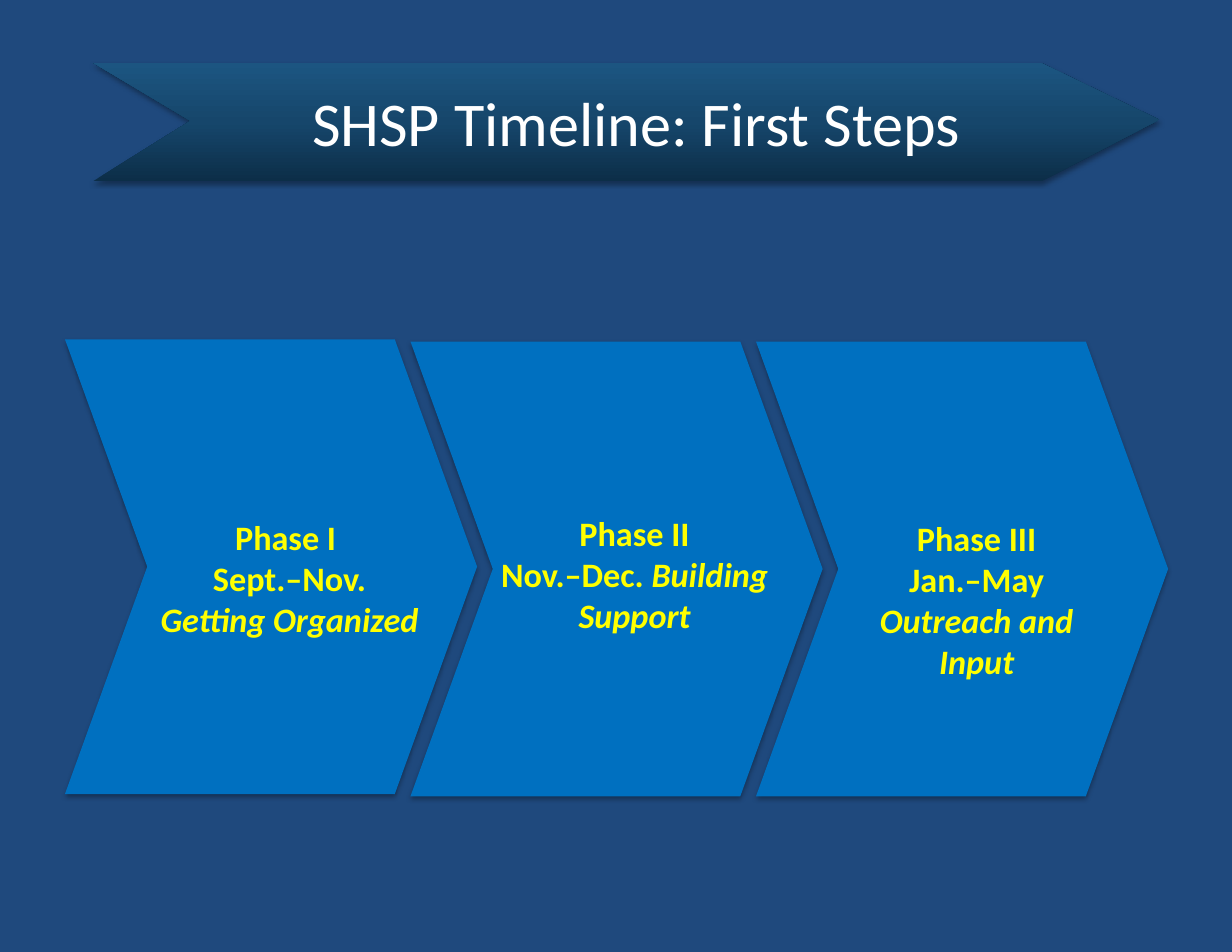
import copy
from lxml import etree
from pptx import Presentation, util as u
from pptx.dml.color import RGBColor
from pptx.enum import text
from pptx.oxml.ns import qn

NAVY = RGBColor(0x1F, 0x49, 0x7D)
BLUE = RGBColor(0x00, 0x70, 0xC0)
YELLOW = RGBColor(0xFF, 0xFF, 0x00)
WHITE = RGBColor(0xFF, 0xFF, 0xFF)
BANNER_STOPS = [
    (0, RGBColor(0x0C, 0x2E, 0x48)),
    (0.5, RGBColor(0x16, 0x46, 0x6B)),
    (1, RGBColor(0x1C, 0x55, 0x81)),
]

deck = Presentation()
deck.slide_width, deck.slide_height = u.Inches(11), u.Inches(8.5)
COLUMN = deck.slide_width / 110
ROW = deck.slide_height / 85
page = deck.slides.add_slide(deck.slide_layouts[6])
page.background.fill.solid()
page.background.fill.fore_color.rgb = NAVY


def add_outline(points):
    corners = [(round(x * COLUMN), round(y * ROW)) for x, y in points]
    builder = page.shapes.build_freeform(*corners[0], scale=1)
    builder.add_line_segments(corners[1:], close=True)
    shape = builder.convert_to_shape()
    shape.line.fill.background()
    shape.shadow.inherit = False
    effects = shape._element.spPr.find(qn("a:effectLst"))
    shadow = etree.SubElement(
        effects, qn("a:outerShdw"), blurRad=str(u.Pt(3.1)), dist=str(u.Pt(1.8)),
        dir="5400000", rotWithShape="0")
    tint = etree.SubElement(shadow, qn("a:srgbClr"), val="000000")
    etree.SubElement(tint, qn("a:alpha"), val="35000")
    return shape


def add_text(lines, left, top, width, height, size, color, bold=False,
             anchor=text.MSO_ANCHOR.TOP, margin_top=0.5):
    box = page.shapes.add_textbox(
        round(left * COLUMN), round(top * ROW), round(width * COLUMN), round(height * ROW))
    frame = box.text_frame
    frame.word_wrap = True
    frame.vertical_anchor = anchor
    frame.margin_top = round(margin_top * ROW)
    for index, line in enumerate(lines):
        para = frame.paragraphs[0] if index == 0 else frame.add_paragraph()
        para.alignment = text.PP_ALIGN.CENTER
        for words, italic in line:
            span = para.add_run()
            span.text = words
            span.font.name = "Calibri"
            span.font.size = u.Pt(size)
            span.font.color.rgb = color
            span.font.bold = bold
            span.font.italic = italic


banner = add_outline([(8.3, 5.6), (92.9, 5.6), (103.5, 10.7), (93, 16.2), (8.3, 16.2), (17, 10.8)])
banner.fill.gradient()
banner.fill.gradient_angle = 90
stop_list = banner._element.spPr.find(".//" + qn("a:gsLst"))
stop_list.insert(1, copy.deepcopy(stop_list[0]))
for stop, (position, color) in zip(banner.fill.gradient_stops, BANNER_STOPS):
    stop.position = position
    stop.color.rgb = color

add_text([[("SHSP Timeline: First Steps", False)]], 7.3, 5.6, 99, 10.5, 40, WHITE,
         anchor=text.MSO_ANCHOR.MIDDLE)

CHEVRON_LEFT, CHEVRON_STEP = 5.8, 30.85
BODY, POINT, HALF = 29.45, 7.35, 20.3
for index, top in enumerate([30.3, 30.5, 30.5]):
    left = CHEVRON_LEFT + index * CHEVRON_STEP
    right, middle, bottom = left + BODY, top + HALF, top + 2 * HALF
    chevron = add_outline([(left, top), (right, top), (right + POINT, middle),
                           (right, bottom), (left, bottom), (left + POINT, middle)])
    chevron.fill.solid()
    chevron.fill.fore_color.rgb = BLUE

PHASES = [
    (13, 42.6, 25.7, 18,
     [[("Phase I ", False)], [("Sept.–Nov.", False)], [("Getting Organized", True)]]),
    (39.4, 42.2, 34.5, 18,
     [[("Phase II", False)], [("Nov.–Dec. ", False), ("Building Support", True)]]),
    (73.9, 42.7, 26.6, 28.4,
     [[("Phase III", False)], [("Jan.–May", False)], [("Outreach and Input", True)]]),
]
for left, top, width, height, lines in PHASES:
    add_text(lines, left, top, width, height, 22, YELLOW, bold=True, margin_top=3.5)

deck.save("out.pptx")
